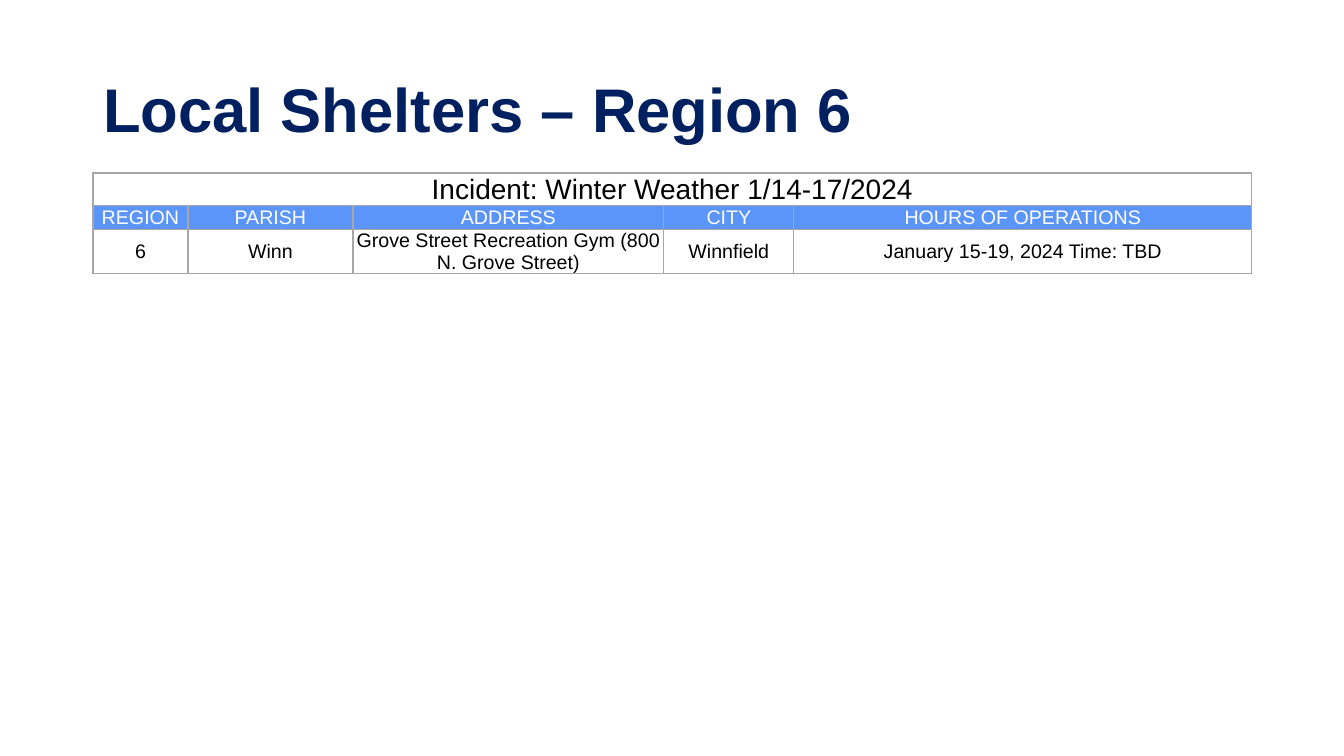
"""Build the Region 6 local shelters slide."""
import pptx
import pptx.dml.color
import pptx.enum.text
import pptx.oxml
import pptx.oxml.ns
import pptx.util

SCALE = 914400 / 100.8
HUES = {"navy": "002060", "black": "000000", "white": "FFFFFF",
        "blue": "5B95F9", "gray": "A6A6A6"}
ALIGN = pptx.enum.text.PP_ALIGN
MID = pptx.enum.text.MSO_ANCHOR.MIDDLE


def px(count):
    return pptx.util.Emu(round(count * SCALE))


def write(para, text, size, hue, align, bold=False):
    para.alignment = align
    run = para.add_run()
    run.text = text
    run.font.name = "Arial"
    run.font.size = pptx.util.Pt(size)
    run.font.bold = bold
    run.font.color.rgb = pptx.dml.color.RGBColor.from_string(HUES[hue])


deck = pptx.Presentation()
deck.slide_width, deck.slide_height = px(1344), px(756)
slide = deck.slides.add_slide(deck.slide_layouts[5])

title = slide.shapes.title
title.left, title.top, title.width, title.height = px(93), px(40), px(1159), px(146)
frame = title.text_frame
frame.auto_size = pptx.enum.text.MSO_AUTO_SIZE.NONE
frame.word_wrap = True
frame.vertical_anchor = MID
frame.paragraphs[0].line_spacing = 0.9
write(frame.paragraphs[0], "Local Shelters – Region 6", 44, "navy", ALIGN.LEFT, True)

wides = [95, 165, 311, 130, 458]
rows = [
    (32, 20, "black", None, 1, ["Incident: Winter Weather 1/14-17/2024"]),
    (24, 14, "white", "blue", 1,
     ["REGION", "PARISH", "ADDRESS", "CITY", "HOURS OF OPERATIONS"]),
    (44, 14, "black", "white", 0,
     ["6", "Winn", "Grove Street Recreation Gym (800 N. Grove Street)",
      "Winnfield", "January 15-19, 2024 Time: TBD"]),
]
table = slide.shapes.add_table(
    len(rows), len(wides), px(93), px(173), px(sum(wides)),
    px(sum(row[0] for row in rows))).table
table.first_row = table.horz_banding = False
for col, wide in zip(table.columns, wides):
    col.width = px(wide)
table.cell(0, 0).merge(table.cell(0, len(wides) - 1))

for r, (tall, size, hue, fill, inset, texts) in enumerate(rows):
    table.rows[r].height = px(tall)
    for c in range(len(wides)):
        cell = table.cell(r, c)
        cell.vertical_anchor = MID
        cell.margin_left = cell.margin_right = cell.margin_top = px(inset)
        cell.margin_bottom = 0
        for side in "LRTB":
            cell._tc.get_or_add_tcPr().append(pptx.oxml.parse_xml(
                f'<a:ln{side} {pptx.oxml.ns.nsdecls("a")} w="12700"><a:solidFill>'
                f'<a:srgbClr val="{HUES["gray"]}"/></a:solidFill></a:ln{side}>'))
        if fill:
            cell.fill.solid()
            cell.fill.fore_color.rgb = pptx.dml.color.RGBColor.from_string(HUES[fill])
        else:
            cell.fill.background()
        if c < len(texts):
            write(cell.text_frame.paragraphs[0], texts[c], size, hue, ALIGN.CENTER)

deck.save("out.pptx")
